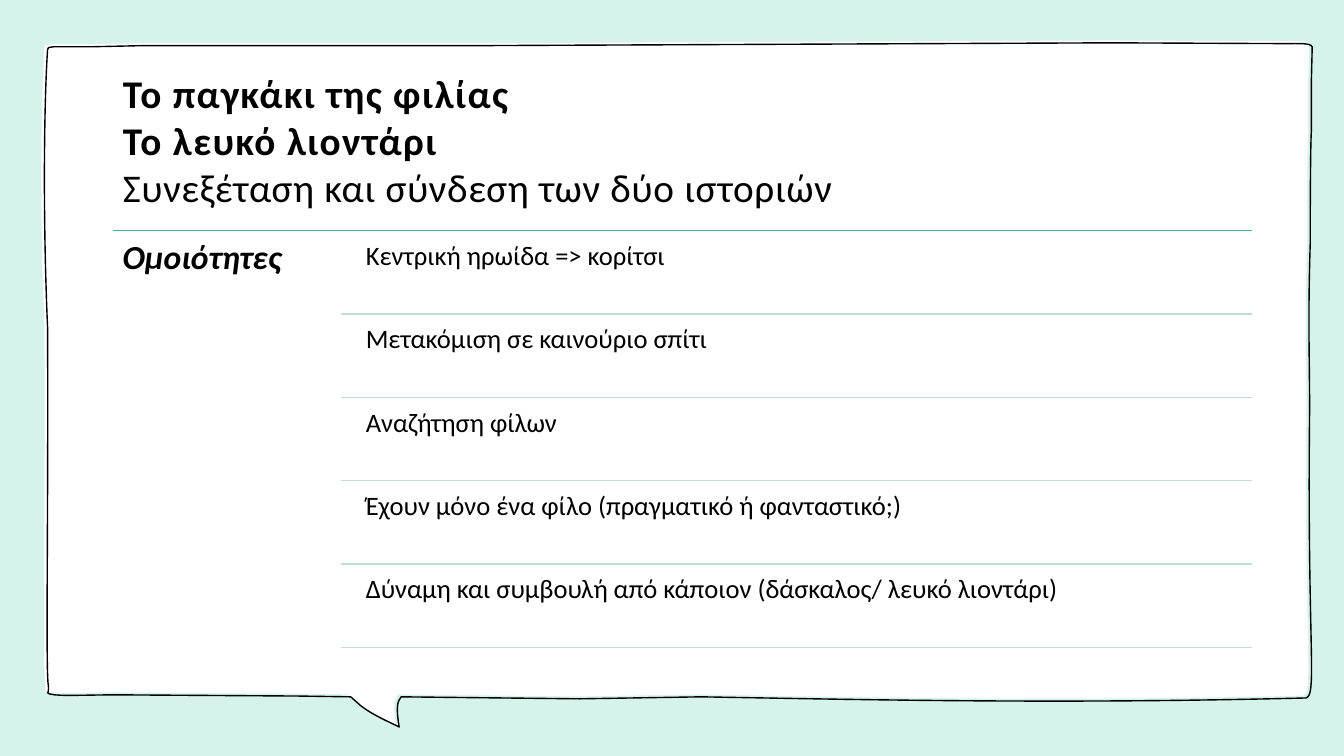
from lxml.etree import SubElement
from pptx import Presentation
from pptx.dml.color import RGBColor
from pptx.enum.shapes import MSO_CONNECTOR as Connector
from pptx.enum.text import MSO_ANCHOR as Anchor, MSO_AUTO_SIZE as AutoSize, PP_ALIGN as Align
from pptx.oxml.ns import qn
from pptx.util import Cm, Pt

MINT = RGBColor(0xD5, 0xF2, 0xEB)
TEAL = RGBColor(0x38, 0xB6, 0x98)
PALE_TEAL = RGBColor(0xBF, 0xDE, 0xD4)
WHITE = RGBColor(0xFF, 0xFF, 0xFF)
BLACK = RGBColor(0x00, 0x00, 0x00)

UNITS_PER_CM = 1000

BUBBLE = [
    (27.91, 1.02), (32.33, 1.04),
    (32.66, 1.04, 32.94, 1.02, 32.99, 1.12),
    (32.97, 1.93),
    (32.97, 2.36, 32.97, 2.79, 32.97, 3.23),
    (32.94, 3.56, 32.94, 5.92, 32.94, 6.07),
    (32.87, 8.31, 32.94, 9.22, 32.92, 10.72),
    (32.87, 16.61, 33.15, 17.6, 32.77, 17.53),
    (26.75, 17.68, 22.07, 17.58, 17.6, 17.5),
    (14.53, 17.55), (10.03, 17.5), (9.98, 17.58),
    (9.91, 17.7, 9.93, 17.96, 9.98, 18.26),
    (9.68, 18.11, 9.32, 17.96, 9.02, 17.73),
    (8.76, 17.5), (7.42, 17.48), (2.9, 17.45),
    (2.18, 17.45, 1.6, 17.48, 1.3, 17.45),
    (1.02, 17.4, 1.17, 17.45, 1.14, 17.22),
    (1.07, 16.84, 1.14, 13.18, 1.12, 8.2),
    (0.99, 5.18, 1.04, 2.36, 1.12, 1.19),
    (1.14, 1.17, 1.14, 1.14, 1.14, 1.14),
    (1.27, 1.12), (1.88, 1.12), (2.18, 1.12), (3.56, 1.09), (12.12, 1.09),
    (27.91, 1.02),
]

TITLE = [
    ("Το παγκάκι της φιλίας", True, 1),
    ("Το λευκό λιοντάρι", True, 1),
    ("Συνεξέταση και σύνδεση των δύο ιστοριών", False, 0.5),
]
SIMILARITIES = [
    "Κεντρική ηρωίδα => κορίτσι",
    "Μετακόμιση σε καινούριο σπίτι",
    "Αναζήτηση φίλων",
    "Έχουν μόνο ένα φίλο (πραγματικό ή φανταστικό;)",
    "Δύναμη και συμβουλή από κάποιον (δάσκαλος/ λευκό λιοντάρι)",
]

LEFT, RIGHT = 2.84, 31.55
RULE_LEFT, ITEM_LEFT = 8.59, 9.02
LIST_TOP, ROW_STEP = 5.81, 2.1


class StorySlide:
    font = "Calibri"

    def __init__(self, deck):
        self.slide = deck.slides.add_slide(deck.slide_layouts[5])
        self.shapes = self.slide.shapes
        background = self.slide.background.fill
        background.solid()
        background.fore_color.rgb = MINT

    def add_run(self, paragraph, text, size, bold=False, italic=False, spacing=0):
        run = paragraph.add_run()
        run.text = text
        run.font.name = self.font
        run.font.size = Pt(size)
        run.font.bold = bold
        run.font.italic = italic
        run.font.color.rgb = BLACK
        if spacing:
            run.font._element.set("spc", str(int(spacing * 100)))

    def bubble(self, dx=0, dy=0, fill=None, line=None):
        segments = [[round((value + (dx, dy)[index % 2]) * UNITS_PER_CM)
                     for index, value in enumerate(segment)] for segment in BUBBLE]
        corners = [segment[-2:] for segment in segments]
        origin = [min(values) for values in zip(*corners)]
        builder = self.shapes.build_freeform(*corners[0], scale=Cm(1) / UNITS_PER_CM)
        builder.add_line_segments(corners[1:], close=True)
        outline = builder.convert_to_shape()
        sides = list(outline._element.iter(qn("a:lnTo")))
        for side, segment in zip(sides, segments[1:]):
            if len(segment) == 6:
                self.bend(side, segment, origin)
        outline.shadow.inherit = False
        if fill is None:
            outline.fill.background()
        else:
            outline.fill.solid()
            outline.fill.fore_color.rgb = fill
        if line is None:
            outline.line.fill.background()
        else:
            outline.line.color.rgb = line
            outline.line.width = Pt(1)

    def bend(self, side, segment, origin):
        curve = side.makeelement(qn("a:cubicBezTo"))
        for x, y in zip(segment[::2], segment[1::2]):
            SubElement(curve, qn("a:pt"), x=str(x - origin[0]), y=str(y - origin[1]))
        side.getparent().replace(side, curve)

    def title(self, lines):
        heading = self.shapes.title
        self.shapes._spTree.append(heading._element)
        heading.left, heading.top = Cm(LEFT), Cm(1.55)
        heading.width, heading.height = Cm(RIGHT - LEFT), Cm(3.94)
        frame = heading.text_frame
        frame.auto_size = AutoSize.NONE
        frame.word_wrap = True
        frame.vertical_anchor = Anchor.MIDDLE
        paragraph = frame.paragraphs[0]
        paragraph.alignment = Align.LEFT
        for index, (text, bold, spacing) in enumerate(lines):
            if index:
                paragraph.add_line_break()
            self.add_run(paragraph, text, 28, bold, spacing=spacing)

    def rule(self, left, y, color):
        line = self.shapes.add_connector(
            Connector.STRAIGHT, Cm(left), Cm(y), Cm(RIGHT), Cm(y))
        line.line.color.rgb = color
        line.line.width = Pt(1)
        SubElement(line._element.spPr, qn("a:effectLst"))

    def label(self, text, left, top, width, height, inset, size, emphasis=False):
        box = self.shapes.add_textbox(Cm(left), Cm(top), Cm(width), Cm(height))
        frame = box.text_frame
        frame.word_wrap = True
        frame.margin_left = frame.margin_right = Cm(inset)
        frame.margin_top = frame.margin_bottom = Cm(inset)
        paragraph = frame.paragraphs[0]
        paragraph.line_spacing = 0.9
        self.add_run(paragraph, text, size, emphasis, emphasis)


def main():
    deck = Presentation()
    deck.slide_width, deck.slide_height = Cm(33.87), Cm(19.05)
    story = StorySlide(deck)
    story.bubble(fill=WHITE)
    story.bubble(dx=0.08, dy=0.06, line=BLACK)
    story.title(TITLE)
    story.rule(LEFT, LIST_TOP, TEAL)
    story.label("Ομοιότητες", LEFT, LIST_TOP, RULE_LEFT - LEFT,
                ROW_STEP * len(SIMILARITIES), 0.25, 24, emphasis=True)
    for row, similarity in enumerate(SIMILARITIES):
        top = LIST_TOP + row * ROW_STEP
        story.label(similarity, ITEM_LEFT, top + 0.1, RIGHT - ITEM_LEFT, 2, 0.2, 19)
        story.rule(RULE_LEFT, top + ROW_STEP, PALE_TEAL)
    deck.save("out.pptx")


if __name__ == "__main__":
    main()
